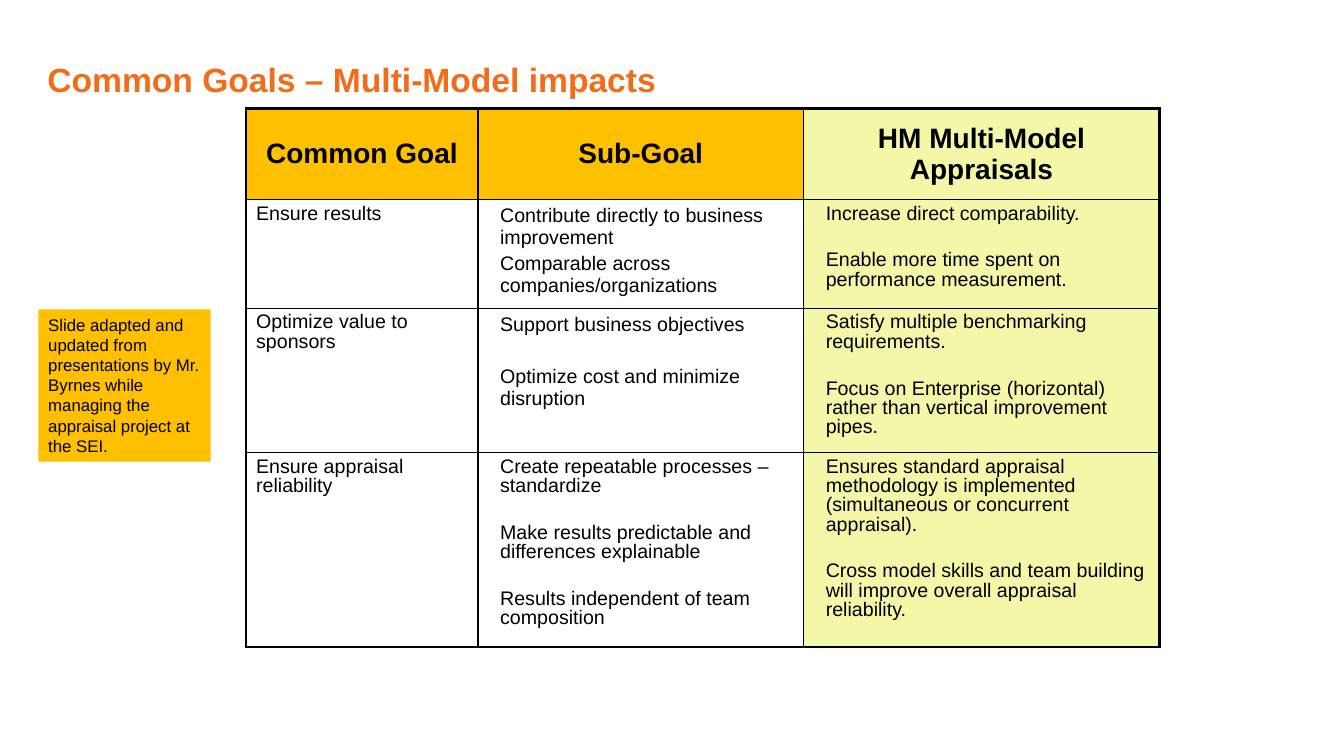
from lxml.etree import SubElement
from pptx import Presentation
from pptx.dml.color import RGBColor
from pptx.enum.shapes import MSO_SHAPE
from pptx.enum.text import MSO_ANCHOR, MSO_AUTO_SIZE, PP_ALIGN
from pptx.oxml.ns import qn
from pptx.util import Inches, Pt

ORANGE, AMBER, PALE_YELLOW = "F16D1A", "FFC000", "F4F6A8"
BLACK, WHITE = "000000", "FFFFFF"
COLUMN_WIDTHS = [2.3, 3.23, 3.53]
ROW_HEIGHTS = [0.9, 1.08, 1.43, 1.93]
HEADERS = ["Common Goal", "Sub-Goal", "HM Multi-Model Appraisals"]
TIGHT = 0.88

# Each row: goal, sub-goals, appraisal impacts, then sub-goal spacing and gap in points
GOALS = [
    ("Ensure results",
     ["Contribute directly to business improvement",
      "Comparable across companies/organizations"],
     ["Increase direct comparability.",
      "Enable more time spent on performance measurement."],
     1.0, 2.8),
    ("Optimize value to sponsors",
     ["Support business objectives",
      "Optimize cost and minimize disruption"],
     ["Satisfy multiple benchmarking requirements.",
      "Focus on Enterprise (horizontal) rather than vertical improvement pipes."],
     1.0, 21.5),
    ("Ensure appraisal reliability",
     ["Create repeatable processes – standardize",
      "Make results predictable and differences explainable",
      "Results independent of team composition"],
     ["Ensures standard appraisal methodology is implemented "
      "(simultaneous or concurrent appraisal).",
      "Cross model skills and team building will improve overall appraisal reliability."],
     TIGHT, 19.5),
]


def color(value):
    return RGBColor.from_string(value)


def write(frame, lines, size=14, bold=False, ink=BLACK, align=PP_ALIGN.LEFT,
          spacing=1.0, gap=0, indent=0):
    """Fill a text frame with one paragraph per line, gap points apart."""
    frame.word_wrap = True
    for index, line in enumerate(lines):
        paragraph = frame.paragraphs[0] if index == 0 else frame.add_paragraph()
        properties = paragraph._p.get_or_add_pPr()
        properties.set("marL", str(Inches(indent)))
        properties.set("indent", "0")
        SubElement(properties, qn("a:buNone"))
        paragraph.alignment = align
        paragraph.line_spacing = spacing
        paragraph.space_before = Pt(gap if index else 0)
        run = paragraph.add_run()
        run.text = line
        run.font.name = "Arial"
        run.font.size = Pt(size)
        run.font.bold = bold
        run.font.color.rgb = color(ink)


def set_borders(cell, widths):
    """Draw black borders; widths are in points for left, right, top, bottom."""
    properties = cell._tc.get_or_add_tcPr()
    for tag, width in zip(("a:lnL", "a:lnR", "a:lnT", "a:lnB"), widths):
        line = SubElement(properties, qn(tag), w=str(Pt(width)))
        fill = SubElement(line, qn("a:solidFill"))
        SubElement(fill, qn("a:srgbClr"), val=BLACK)


def format_cells(table):
    last_row, last_column = len(ROW_HEIGHTS) - 1, len(COLUMN_WIDTHS) - 1
    for row in range(last_row + 1):
        for column in range(last_column + 1):
            cell = table.cell(row, column)
            outer = (column == 0, column == last_column, row == 0, row == last_row)
            set_borders(cell, [2.25 if edge else 1 for edge in outer])
            cell.fill.solid()
            plain = AMBER if row == 0 else WHITE
            cell.fill.fore_color.rgb = color(PALE_YELLOW if column == last_column else plain)


def add_goal_table(slide):
    frame = slide.shapes.add_table(
        len(ROW_HEIGHTS), len(COLUMN_WIDTHS), Inches(2.44), Inches(1.08),
        Inches(sum(COLUMN_WIDTHS)), Inches(sum(ROW_HEIGHTS)))
    table = frame.table
    table.first_row = table.horz_banding = False
    for column, width in zip(table.columns, COLUMN_WIDTHS):
        column.width = Inches(width)
    for row, height in zip(table.rows, ROW_HEIGHTS):
        row.height = Inches(height)
    format_cells(table)

    for column, header in enumerate(HEADERS):
        cell = table.cell(0, column)
        cell.vertical_anchor = MSO_ANCHOR.MIDDLE
        write(cell.text_frame, [header], size=20, bold=True, align=PP_ALIGN.CENTER)
    for row, (goal, sub_goals, impacts, spacing, gap) in enumerate(GOALS, start=1):
        goal_cell, sub_goal_cell, impact_cell = table.rows[row].cells
        write(goal_cell.text_frame, [goal], spacing=TIGHT)
        write(sub_goal_cell.text_frame, sub_goals, spacing=spacing, gap=gap, indent=0.12)
        write(impact_cell.text_frame, impacts, spacing=TIGHT, gap=19.5, indent=0.12)


def place_title(slide, text):
    title = slide.shapes.title
    title.left, title.top = Inches(0.37), Inches(0.49)
    title.width, title.height = Inches(10.68), Inches(0.47)
    frame = title.text_frame
    frame.auto_size = MSO_AUTO_SIZE.NONE
    frame.vertical_anchor = MSO_ANCHOR.TOP
    frame.margin_top = Inches(0.09)
    write(frame, [text], size=24, bold=True, ink=ORANGE)


def add_note(slide, text):
    note = slide.shapes.add_shape(
        MSO_SHAPE.RECTANGLE, Inches(0.38), Inches(3.07), Inches(1.71), Inches(1.51))
    note.shadow.inherit = False
    note.fill.solid()
    note.fill.fore_color.rgb = color(AMBER)
    note.line.fill.background()
    note.text_frame.auto_size = MSO_AUTO_SIZE.SHAPE_TO_FIT_TEXT
    note.text_frame.vertical_anchor = MSO_ANCHOR.TOP
    write(note.text_frame, [text], size=12)


def main():
    presentation = Presentation()
    presentation.slide_width, presentation.slide_height = Inches(13.33), Inches(7.5)
    slide = presentation.slides.add_slide(presentation.slide_layouts.get_by_name("Title Only"))
    place_title(slide, "Common Goals – Multi-Model impacts")
    add_goal_table(slide)
    add_note(slide, "Slide adapted and updated from presentations by Mr. Byrnes "
                    "while managing the appraisal project at the SEI.")
    presentation.save("out.pptx")


if __name__ == "__main__":
    main()
